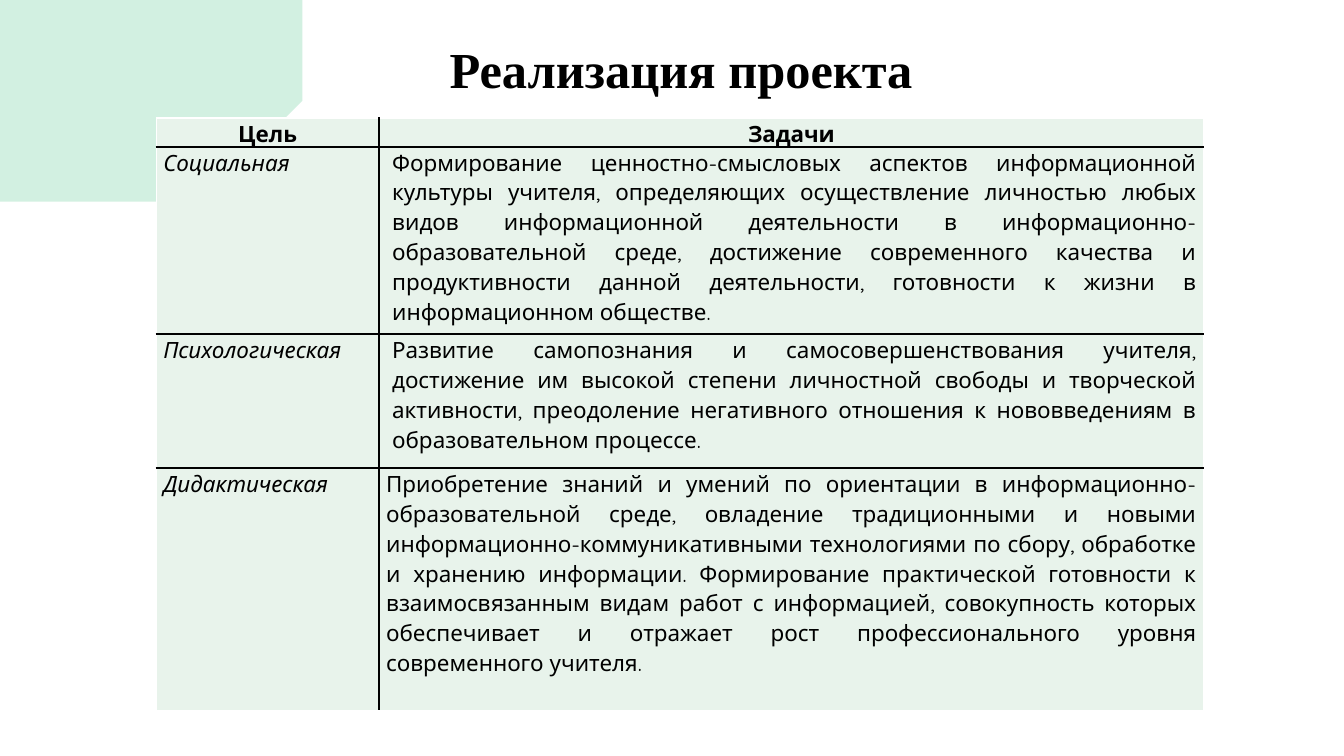
from pptx import Presentation
from pptx import util as u
from pptx.dml import color
from pptx.enum import text
from pptx.oxml import parse_xml
from pptx.oxml import ns

BRUSH = [
    (0, 0.34), (0.06, 0.35), (0.25, 0.37), (0.66, 0.38), (1.02, 0.37), (1.51, 0.38),
    (1.94, 0.41), (2.48, 0.41), (2.65, 0.41), (2.8, 0.47), (2.71, 0.49), (2.55, 0.54),
    (2.53, 0.57), (2.56, 0.59), (2.62, 0.62), (2.5, 0.62), (2.38, 0.66), (2.46, 0.68),
    (2.56, 0.7), (2.66, 0.71), (2.75, 0.74), (2.51, 0.75), (2.63, 0.78), (2.73, 0.81),
    (2.8, 0.82), (2.88, 0.83), (2.9, 0.85), (2.87, 0.88), (2.84, 0.88), (2.63, 0.88),
    (2.95, 0.92), (3.3, 0.94), (3.21, 0.97), (3.22, 1.04), (3.18, 1.06), (3.07, 1.11),
    (3, 1.13), (2.83, 1.16), (2.8, 1.2), (2.78, 1.25), (2.74, 1.28), (3.08, 1.28),
    (2.69, 1.38), (2.73, 1.42), (2.52, 1.48), (2.63, 1.48), (2.4, 1.59), (1.97, 1.72),
    (1.02, 1.88), (0.65, 1.91), (0.23, 1.9), (0.07, 1.89), (0, 1.88),
]

ROWS = [
    ("Цель", "Задачи"),
    ("Социальная",
     "Формирование ценностно-смысловых аспектов информационной культуры учителя, "
     "определяющих осуществление личностью любых видов информационной деятельности "
     "в информационно-образовательной среде, достижение современного качества и "
     "продуктивности данной деятельности, готовности к жизни в информационном обществе."),
    ("Психологическая",
     "Развитие самопознания и самосовершенствования учителя, достижение им высокой "
     "степени личностной свободы и творческой активности, преодоление негативного "
     "отношения к нововведениям в образовательном процессе."),
    ("Дидактическая",
     "Приобретение знаний и умений по ориентации в информационно-образовательной "
     "среде, овладение традиционными и новыми информационно-коммуникативными "
     "технологиями по сбору, обработке и хранению информации. Формирование "
     "практической готовности к взаимосвязанным видам работ с информацией, "
     "совокупность которых обеспечивает и отражает рост профессионального уровня "
     "современного учителя."),
]


def rgb(value):
    return color.RGBColor.from_string(value)


class Deck:
    """Holds the style and the current slide, and draws each kind of element."""

    ink, paper, cell_fill, green = "000000", "FFFFFF", "E8F3EB", "20B66C"
    title_font, body_font = "Times New Roman", "Quicksand"

    def __init__(self, prs):
        self.s = prs.slides.add_slide(prs.slide_layouts[6])
        self.s.background.fill.solid()
        self.s.background.fill.fore_color.rgb = rgb(self.paper)

    def style(self, p, font, size, bold=False, italic=False):
        for r in p.runs:
            r.font.name, r.font.size = font, u.Pt(size)
            r.font.bold, r.font.italic = bold, italic
            r.font.color.rgb = rgb(self.ink)

    def brush(self, points, alpha):
        fb = self.s.shapes.build_freeform(*points[0], scale=u.Inches(1))
        fb.add_line_segments(points[1:], close=True)
        sp = fb.convert_to_shape()
        sp.shadow.inherit = False
        sp.line.fill.background()
        sp.fill.solid()
        sp.fill.fore_color.rgb = rgb(self.green)
        clr = sp.fill._xPr.find(".//" + ns.qn("a:srgbClr"))
        clr.append(parse_xml(f'<a:alpha {ns.nsdecls("a")} val="{alpha * 1000}"/>'))

    def title(self, words, left, top, width, height):
        sp = self.s.shapes.add_textbox(*map(u.Inches, (left, top, width, height)))
        tf = sp.text_frame
        tf.word_wrap = True
        tf.vertical_anchor = text.MSO_ANCHOR.TOP
        tf.text = words
        self.style(tf.paragraphs[0], self.title_font, 36, bold=True)

    def border(self, cell, side, outer):
        width, line = (1, self.paper) if outer else (1.5, self.ink)
        cell._tc.get_or_add_tcPr().append(parse_xml(
            f'<a:ln{side} {ns.nsdecls("a")} w="{u.Pt(width)}"><a:solidFill>'
            f'<a:srgbClr val="{line}"/></a:solidFill></a:ln{side}>'))

    def cell(self, cell, words, header, label, indent):
        cell.margin_left = cell.margin_right = u.Inches(0.07)
        cell.margin_top = cell.margin_bottom = 0
        cell.text = words
        p = cell.text_frame.paragraphs[0]
        p.alignment = text.PP_ALIGN.CENTER if header else text.PP_ALIGN.JUSTIFY
        p.line_spacing, p.space_after = 1.07, u.Pt(8)
        if indent:
            p._p.get_or_add_pPr().set("marL", str(u.Inches(0.06)))
        self.style(p, self.body_font, 16, bold=header, italic=label and not header)

    def table(self, rows, left, top, widths, heights):
        box = map(u.Inches, (left, top, sum(widths), sum(heights)))
        table = self.s.shapes.add_table(len(rows), len(widths), *box).table
        for column, width in zip(table.columns, widths):
            column.width = u.Inches(width)
        for i, row in enumerate(rows):
            table.rows[i].height = u.Inches(heights[i])
            for j, words in enumerate(row):
                cell = table.cell(i, j)
                self.cell(cell, words, i == 0, j == 0, j == 1 and i in (1, 2))
                self.border(cell, "L", j == 0)
                self.border(cell, "R", j == len(row) - 1)
                self.border(cell, "T", i == 0)
                self.border(cell, "B", i == len(rows) - 1)
                cell.fill.solid()
                cell.fill.fore_color.rgb = rgb(self.cell_fill)


def main():
    prs = Presentation()
    prs.slide_width, prs.slide_height = u.Inches(13.33), u.Inches(7.5)
    deck = Deck(prs)
    deck.brush(BRUSH, 20)
    deck.title("Реализация проекта", 4.36, 0.33, 5.05, 0.85)
    deck.table(ROWS, 1.55, 1.17, (2.21, 8.18), (0.28, 1.86, 1.33, 2.4))
    prs.save("out.pptx")


if __name__ == "__main__":
    main()
